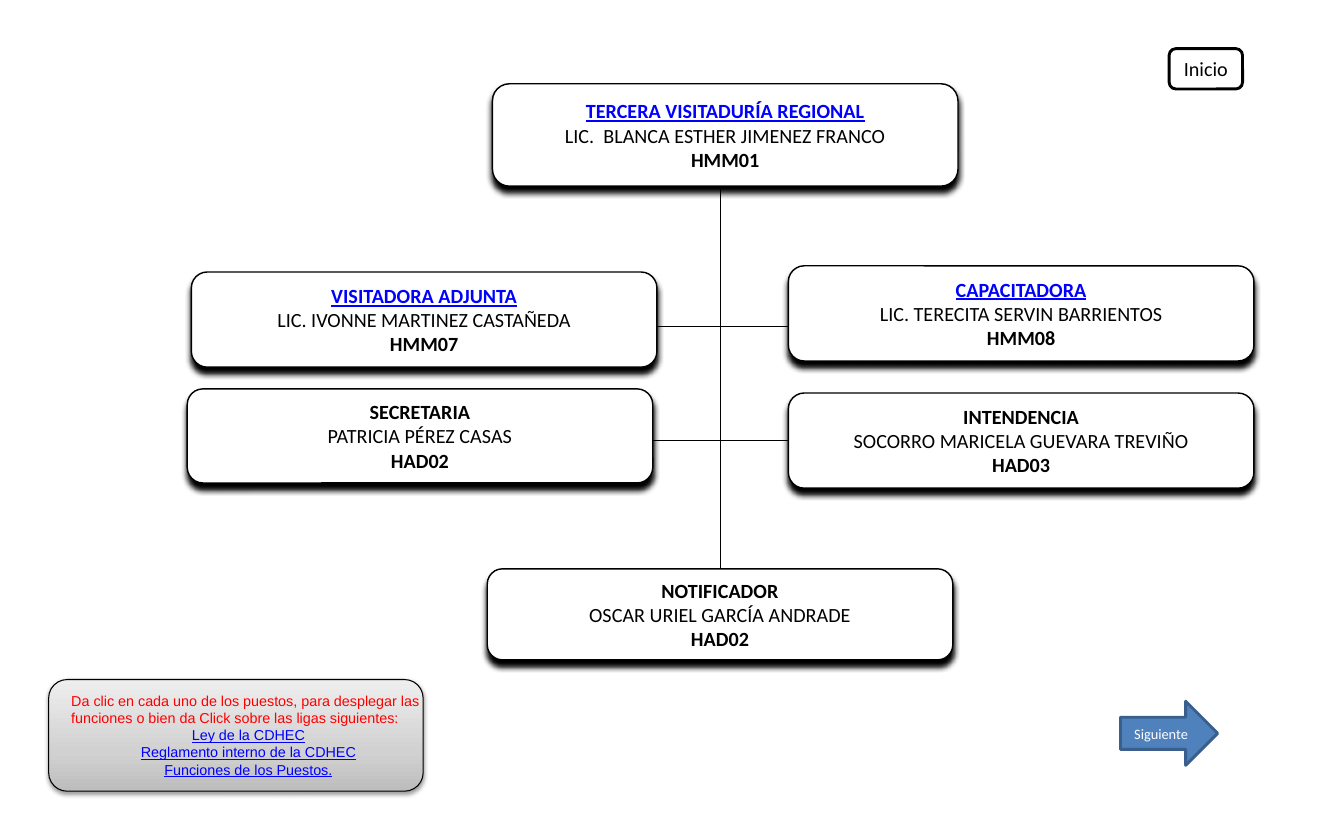
from dataclasses import dataclass

from lxml.etree import SubElement
from pptx import Presentation
from pptx.dml.color import RGBColor
from pptx.enum.shapes import MSO_CONNECTOR, MSO_SHAPE
from pptx.enum.text import MSO_ANCHOR, MSO_AUTO_SIZE, PP_ALIGN
from pptx.oxml.ns import qn
from pptx.util import Inches, Pt

BLACK, WHITE, BLUE, RED = "000000", "FFFFFF", "0000FF", "FF0000"
ROUND = MSO_SHAPE.ROUNDED_RECTANGLE
BOLD = {"bold": True}
LINK = {"underline": True}
FRAME = {
    "word_wrap": False,
    "margin_left": Inches(0.17),
    "margin_right": Inches(0.17),
    "margin_top": Inches(0.09),
    "margin_bottom": Inches(0.09),
}


@dataclass
class Post:
    left: float
    top: float
    height: float
    title: str
    name: str
    code: str
    linked: bool = False


@dataclass
class Wire:
    x1: float
    y1: float
    x2: float
    y2: float


@dataclass
class Line:
    text: str
    color: str
    look: dict
    align: PP_ALIGN = PP_ALIGN.CENTER


POSTS = [
    Post(4.76, 0.81, 0.99, "TERCERA VISITADURÍA REGIONAL",
         "LIC.  BLANCA ESTHER JIMENEZ FRANCO", "HMM01", True),
    Post(1.85, 2.63, 0.92, "VISITADORA ADJUNTA",
         "LIC. IVONNE MARTINEZ CASTAÑEDA", "HMM07", True),
    Post(1.81, 3.76, 0.91, "SECRETARIA", "PATRICIA PÉREZ CASAS", "HAD02"),
    Post(7.62, 3.8, 0.92, "INTENDENCIA",
         "SOCORRO MARICELA GUEVARA TREVIÑO", "HAD03"),
    Post(7.62, 2.57, 0.92, "CAPACITADORA",
         "LIC. TERECITA SERVIN BARRIENTOS", "HMM08", True),
    Post(4.71, 5.5, 0.88, "NOTIFICADOR", "OSCAR URIEL GARCÍA ANDRADE", "HAD02"),
]
WIRES = [
    Wire(6.96, 1.75, 6.96, 5.5),
    Wire(6.72, 4.26, 7.82, 4.26),
    Wire(6.97, 3.16, 8.07, 3.16),
    Wire(5.87, 3.16, 6.97, 3.16),
    Wire(6.31, 4.26, 6.97, 4.26),
]
HELP = [
    Line("Da clic en cada uno de los puestos, para desplegar las funciones "
         "o bien da Click sobre las ligas siguientes:", RED, {}, PP_ALIGN.LEFT),
    Line("Ley de la CDHEC", BLUE, LINK),
    Line("Reglamento interno de la CDHEC", BLUE, LINK),
    Line("Funciones de los Puestos.", BLUE, LINK),
]
STOPS = [(0, "BDBDBD"), (35, "D1D1D1"), (100, "EEEEEE")]


def style(item, look: dict) -> None:
    for key, value in look.items():
        setattr(item, key, value)


def paint(color, code: str) -> None:
    color.rgb = RGBColor.from_string(code)


def write(shape, lines: list[Line], size: float, face: str = "Calibri") -> None:
    frame = shape.text_frame
    for index, line in enumerate(lines):
        para = frame.add_paragraph() if index else frame.paragraphs[0]
        para.alignment = line.align
        run = para.add_run()
        run.text = line.text
        style(run.font, {"size": Pt(size), "name": face, **line.look})
        paint(run.font.color, line.color)


def shade(shape, blur: float, drop: float, alpha: int) -> None:
    effect = shape.element.spPr.find(qn("a:effectLst"))
    outer = SubElement(effect, qn("a:outerShdw"), blurRad=str(Pt(blur)),
                       dist=str(Pt(drop)), dir="5400000", rotWithShape="0")
    color = SubElement(outer, qn("a:srgbClr"), val=BLACK)
    SubElement(color, qn("a:alpha"), val=str(alpha * 1000))


def blend(shape) -> None:
    shape.fill.gradient()
    shape.fill.gradient_angle = 90
    stops = shape.element.spPr.find(qn("a:gradFill")).find(qn("a:gsLst"))
    for stop in list(stops):
        stops.remove(stop)
    for place, code in STOPS:
        stop = SubElement(stops, qn("a:gs"), pos=str(place * 1000))
        SubElement(stop, qn("a:srgbClr"), val=code)


def block(slide, kind: MSO_SHAPE, area: tuple, fill: str, edge: str,
          width: float):
    shape = slide.shapes.add_shape(kind, *map(Inches, area))
    shape.shadow.inherit = False
    shape.fill.solid()
    paint(shape.fill.fore_color, fill)
    paint(shape.line.color, edge)
    shape.line.width = Pt(width)
    shape.text_frame.vertical_anchor = MSO_ANCHOR.MIDDLE
    return shape


def card(slide, post: Post):
    area = (post.left, post.top, 4.5, post.height)
    shape = block(slide, ROUND, area, WHITE, BLACK, 1)
    shade(shape, 4, 4, 100)
    style(shape.text_frame, FRAME)
    look = {**BOLD, **LINK} if post.linked else BOLD
    write(shape, [
        Line(post.title, BLUE if post.linked else BLACK, look),
        Line(post.name, BLACK, {}),
        Line(post.code, BLACK, BOLD),
    ], 14)
    return shape


def join(slide, wire: Wire):
    ends = map(Inches, (wire.x1, wire.y1, wire.x2, wire.y2))
    link = slide.shapes.add_connector(MSO_CONNECTOR.STRAIGHT, *ends)
    paint(link.line.color, BLACK)
    link.line.width = Pt(0.75)
    SubElement(link.element.spPr, qn("a:effectLst"))
    return link


def guide(slide) -> None:
    panel = block(slide, ROUND, (0.47, 6.57, 3.62, 1.08), WHITE, BLACK, 0.75)
    blend(panel)
    shade(panel, 3.1, 1.6, 38)
    area = map(Inches, (0.59, 6.64, 3.62, 0.94))
    label = slide.shapes.add_textbox(*area)
    style(label.text_frame,
          {"word_wrap": True, "auto_size": MSO_AUTO_SIZE.SHAPE_TO_FIT_TEXT})
    write(label, HELP, 10, "Arial")


def main() -> None:
    deck = Presentation()
    style(deck, {"slide_width": Inches(12.99), "slide_height": Inches(7.88)})
    slide = deck.slides.add_slide(deck.slide_layouts[6])
    links = [join(slide, wire) for wire in WIRES]
    cards = [card(slide, post) for post in POSTS]
    links[0].end_connect(cards[-1], 0)
    start = block(slide, ROUND, (11.3, 0.47, 0.71, 0.39), WHITE, BLACK, 2)
    write(start, [Line("Inicio", BLACK, {})], 14)
    guide(slide)
    arrow = block(slide, MSO_SHAPE.RIGHT_ARROW, (10.83, 6.78, 0.94, 0.62),
                  "4F81BD", "3A5F8C", 2)
    write(arrow, [Line("Siguiente", WHITE, {})], 10)
    deck.save("out.pptx")


if __name__ == "__main__":
    main()
